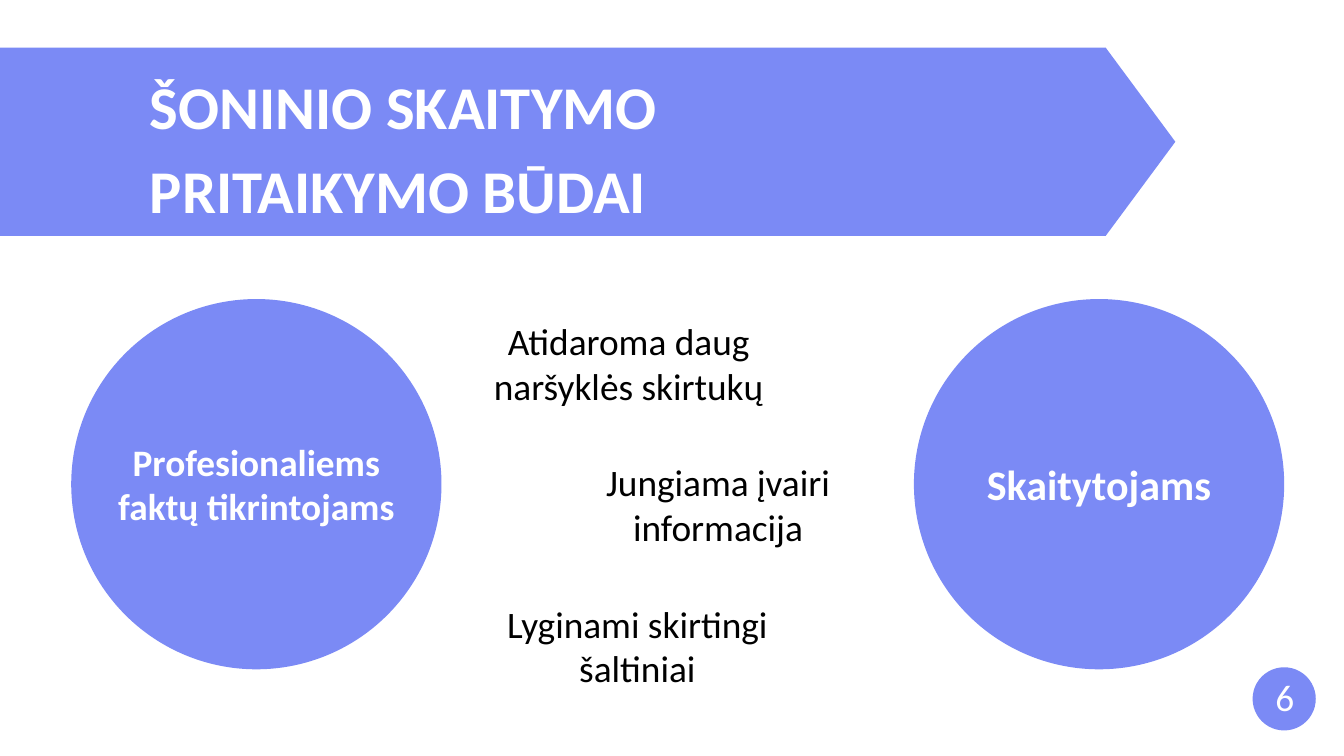
from pptx import Presentation
from pptx import util as u
from pptx.dml.color import RGBColor
from pptx.enum import shapes, text

PX = 9144  # EMU per px, 100 px to the inch
FONT = "Calibri"
PERIWINKLE, WHITE, BLACK = "7B8AF5", "FFFFFF", "000000"


def px(length):
    return u.Emu(length * PX)


def colour(value):
    return RGBColor.from_string(value)


def add_filled(page, kind, left, top, width, height):
    shape = page.shapes.add_shape(kind, px(left), px(top), px(width), px(height))
    shape.shadow.inherit = False
    shape.fill.solid()
    shape.fill.fore_color.rgb = colour(PERIWINKLE)
    shape.line.fill.background()
    return shape


def style(para, size, hue, bold=False, align=text.PP_ALIGN.CENTER):
    para.alignment = align
    para.font.name = FONT
    para.font.size = u.Pt(size)
    para.font.bold = bold
    para.font.color.rgb = colour(hue)


def add_label(page, words, left, top, width, height, size, hue, **looks):
    box = page.shapes.add_textbox(px(left), px(top), px(width), px(height))
    box.text_frame.word_wrap = True
    para = box.text_frame.paragraphs[0]
    para.text = words
    style(para, size, hue, **looks)


def add_banner(page, lines, left, top, width, height):
    arrow = add_filled(page, shapes.MSO_SHAPE.PENTAGON, left, top, width, height)
    arrow.adjustments[0] = 0.37

    title = page.shapes.title
    title.left, title.top = px(left + 223), px(top + 12)
    title.width, title.height = px(1138), px(255)
    title.element.getparent().append(title.element)  # in front of the arrow
    frame = title.text_frame
    frame.text = "\n".join(lines)
    frame.word_wrap = True
    frame.auto_size = text.MSO_AUTO_SIZE.NONE
    frame.vertical_anchor = text.MSO_ANCHOR.TOP
    frame.margin_left = frame.margin_right = frame.margin_bottom = 0
    frame.margin_top = px(19)
    for para in frame.paragraphs:
        style(para, 65, WHITE, bold=True, align=text.PP_ALIGN.LEFT)
        para.space_before = u.Pt(12.8)


def add_audience(page, words, left, top, diameter, size, label_top, label_height):
    add_filled(page, shapes.MSO_SHAPE.OVAL, left, top, diameter, diameter)
    add_label(page, words, left + 28, top + label_top, diameter - 56, label_height,
              size, WHITE, bold=True)


def add_methods(page, methods, top, step):
    for row, (left, words) in enumerate(methods):
        add_label(page, words, left, top + row * step, 475, 145, 40, BLACK)


def add_page_number(page, number, left, top, diameter):
    add_filled(page, shapes.MSO_SHAPE.OVAL, left, top, diameter, diameter)
    add_label(page, number, left + 24, top + 5, 67, 77, 40, WHITE,
              align=text.PP_ALIGN.LEFT)


def main():
    deck = Presentation()
    deck.slide_width, deck.slide_height = px(2000), px(1125)
    page = deck.slides.add_slide(deck.slide_layouts.get_by_name("Title Only"))

    add_banner(page, ["ŠONINIO SKAITYMO", "PRITAIKYMO BŪDAI"], 0, 71, 1749, 280)
    add_audience(page, "Profesionaliems faktų tikrintojams", 106, 445, 551, 40, 203, 145)
    add_audience(page, "Skaitytojams", 1360, 445, 551, 45, 233, 86)
    add_methods(page, [
        (698, "Atidaroma daug naršyklės skirtukų"),
        (831, "Jungiama įvairi informacija"),
        (711, "Lyginami skirtingi šaltiniai"),
    ], top=469, step=210)
    add_page_number(page, "6", 1864, 993, 94)

    deck.save("out.pptx")


if __name__ == "__main__":
    main()
